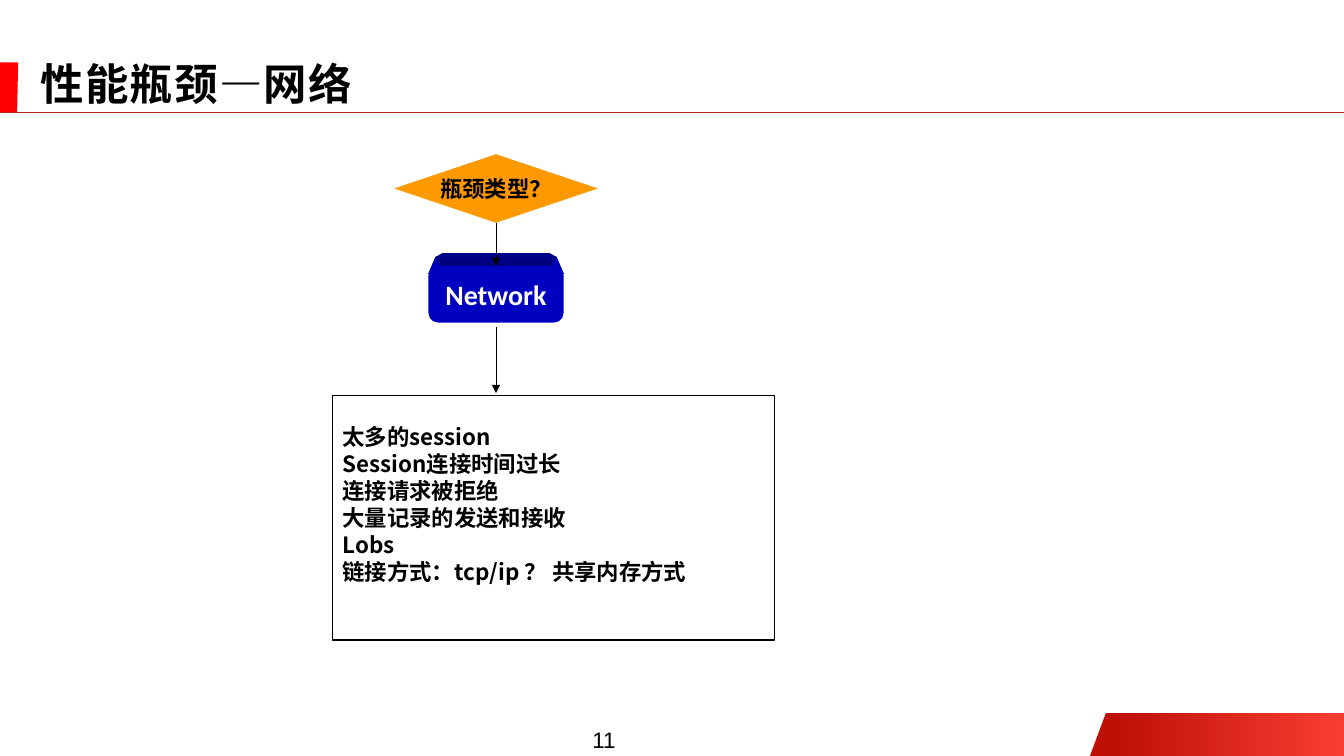
from lxml import etree
from pptx import Presentation
from pptx import util as u
from pptx.dml.color import RGBColor
from pptx.enum import shapes, text
from pptx.oxml.ns import qn

Inches = u.Inches
CJK, LATIN = "Noto Sans CJK SC", "Calibri"
COLORS = {
    "black": "000000", "white": "FFFFFF", "red": "FF0000", "rule": "B82E24",
    "footer_dark": "BE1007", "footer_light": "F93D32", "decision": "FF9900",
    "network": "0000C0", "bevel_top": "000088", "bevel_low": "00007A",
}


def rgb(name):
    return RGBColor.from_string(COLORS[name])


def write(shape, lines, size=16, font=CJK, color="black", bold=True,
          align=text.PP_ALIGN.LEFT, anchor=text.MSO_ANCHOR.MIDDLE,
          bottom=0.05, wrap=False, spacing=None, tracking=None):
    frame = shape.text_frame
    frame.word_wrap = wrap
    frame.vertical_anchor = anchor
    frame.margin_left = frame.margin_right = Inches(0.1)
    frame.margin_top, frame.margin_bottom = Inches(0.05), Inches(bottom)
    for i, line in enumerate(lines):
        para = frame.add_paragraph() if i else frame.paragraphs[0]
        para.alignment = align
        if spacing:
            para.line_spacing = spacing
        run = para.add_run()
        run.text = line
        run.font.size, run.font.bold, run.font.name = u.Pt(size), bold, font
        run.font.color.rgb = rgb(color)
        props = run.font._element
        east_asian = etree.Element(qn("a:ea"), typeface=CJK)
        props.find(qn("a:latin")).addnext(east_asian)
        if tracking:
            props.set("spc", str(tracking))


def paint(shape, fill=None, line=None, gradient=None, angle=0):
    shape.shadow.inherit = False
    if gradient:
        shape.fill.gradient()
        shape.fill.gradient_angle = angle
        for stop, (position, name) in zip(shape.fill.gradient_stops, gradient):
            stop.position, stop.color.rgb = position, rgb(name)
    elif fill:
        shape.fill.solid()
        shape.fill.fore_color.rgb = rgb(fill)
    else:
        shape.fill.background()
    if line:
        shape.line.color.rgb = rgb(line)
        shape.line.width = u.Pt(0.75)
    else:
        shape.line.fill.background()
    return shape


def add_box(slide, kind, left, top, width, height, **look):
    return paint(slide.shapes.add_shape(
        kind, Inches(left), Inches(top), Inches(width), Inches(height)), **look)


def add_outline(slide, points, **look):
    corners = [(Inches(x), Inches(y)) for x, y in points]
    builder = slide.shapes.build_freeform(*corners[0])
    builder.add_line_segments(corners[1:], close=True)
    return paint(builder.convert_to_shape(), **look)


def add_line(slide, x1, y1, x2, y2, color="black", width=0.75, arrow=False):
    line = slide.shapes.add_connector(
        shapes.MSO_CONNECTOR.STRAIGHT, Inches(x1), Inches(y1), Inches(x2), Inches(y2))
    line.line.color.rgb = rgb(color)
    line.line.width = u.Pt(width)
    if arrow:
        etree.SubElement(line.line._get_or_add_ln(), qn("a:tailEnd"), type="triangle")
    etree.SubElement(line._element.spPr, qn("a:effectLst"))
    return line


def header(slide, left, top, width, height):
    base = top + height
    add_outline(slide, [(left, top), (left + 0.18, top), (left + 0.17, base), (left, base)],
                fill="red")
    add_line(slide, left, base - 0.01, left + width, base - 0.01, "rule", 0.5)
    title = slide.shapes.title
    title.left, title.top = Inches(left + 0.3), Inches(top - 0.03)
    title.width, title.height = Inches(12.26), Inches(0.53)
    write(title, ["性能瓶颈—网络"], size=31, wrap=True, spacing=0.9, tracking=100)


def footer(slide, left, top, width, height):
    right, base = left + width, top + height
    add_outline(slide, [(right - 2.52, base), (right - 2.36, top), (right, top), (right, base)],
                gradient=[(0.09, "footer_dark"), (1, "footer_light")])
    number = slide.shapes.add_textbox(
        Inches(left + 5.75), Inches(top + 0.08), Inches(0.48), Inches(0.37))
    write(number, ["11"], font="Arial", bold=False, align=text.PP_ALIGN.CENTER,
          anchor=text.MSO_ANCHOR.BOTTOM)


def network_node(slide, left, top, width, height):
    """Rounded node with a bevelled upper edge rising behind it."""
    right = left + width
    rise = top - 0.13
    add_outline(slide, [(left, top + 0.08), (left + 0.07, rise + 0.04), (left + 0.14, rise),
                        (right - 0.14, rise), (right - 0.07, rise + 0.04),
                        (right, top + 0.08)],
                gradient=[(0, "bevel_top"), (1, "bevel_low")], angle=270)
    # Slanted side faces
    for edge, inward in ((left, 1), (right, -1)):
        add_outline(slide, [(edge, top + 0.08), (edge + 0.07 * inward, rise + 0.04),
                            (edge + 0.14 * inward, top + 0.08)], fill="network")
    node = add_box(slide, shapes.MSO_SHAPE.FLOWCHART_ALTERNATE_PROCESS,
                   left, top, width, height, fill="network")
    write(node, ["Network"], size=20, font=LATIN, color="white",
          align=text.PP_ALIGN.CENTER)
    return node


def flow(slide, left, top, width, height):
    axis = left + 1.62
    decision = add_box(slide, shapes.MSO_SHAPE.FLOWCHART_DECISION,
                       axis - 1.01, top, 2.02, 0.68, fill="decision")
    write(decision, ["瓶颈类型？"], font=LATIN, align=text.PP_ALIGN.CENTER)
    network = network_node(slide, axis - 0.67, top + 1.11, 1.34, 0.56)

    # Arrows down the flow
    to_network = add_line(slide, axis, top + 0.68, axis, top + 1.11, arrow=True)
    to_network.begin_connect(decision, 2)
    to_network.end_connect(network, 0)
    add_line(slide, axis, top + 1.71, axis, top + 2.37, arrow=True)

    # Causes, held one line above the middle by the bottom margin
    causes = add_box(slide, shapes.MSO_SHAPE.RECTANGLE,
                     left, top + 2.39, width, height - 2.39, line="black")
    write(causes, ["太多的session", "Session连接时间过长", "连接请求被拒绝",
                   "大量记录的发送和接收", "Lobs", "链接方式：tcp/ip ？ 共享内存方式"],
          bottom=0.32)


def main():
    deck = Presentation()
    deck.slide_width, deck.slide_height = Inches(13.33), Inches(7.5)
    slide = deck.slides.add_slide(deck.slide_layouts[5])
    header(slide, 0, 0.62, 13.33, 0.5)
    footer(slide, 0, 7.07, 13.33, 0.43)
    flow(slide, 3.3, 1.53, 4.38, 4.82)
    deck.save("out.pptx")


if __name__ == "__main__":
    main()
